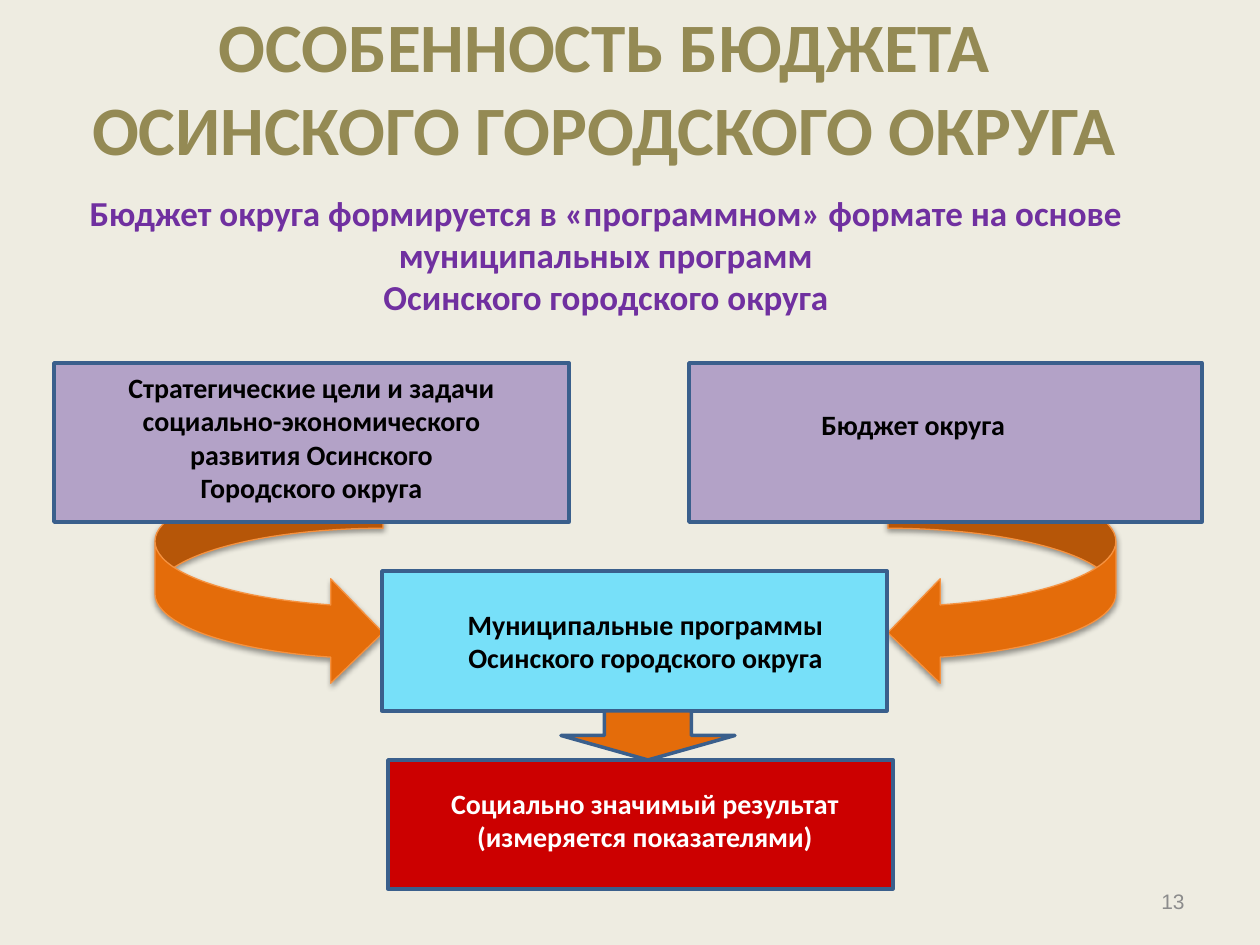
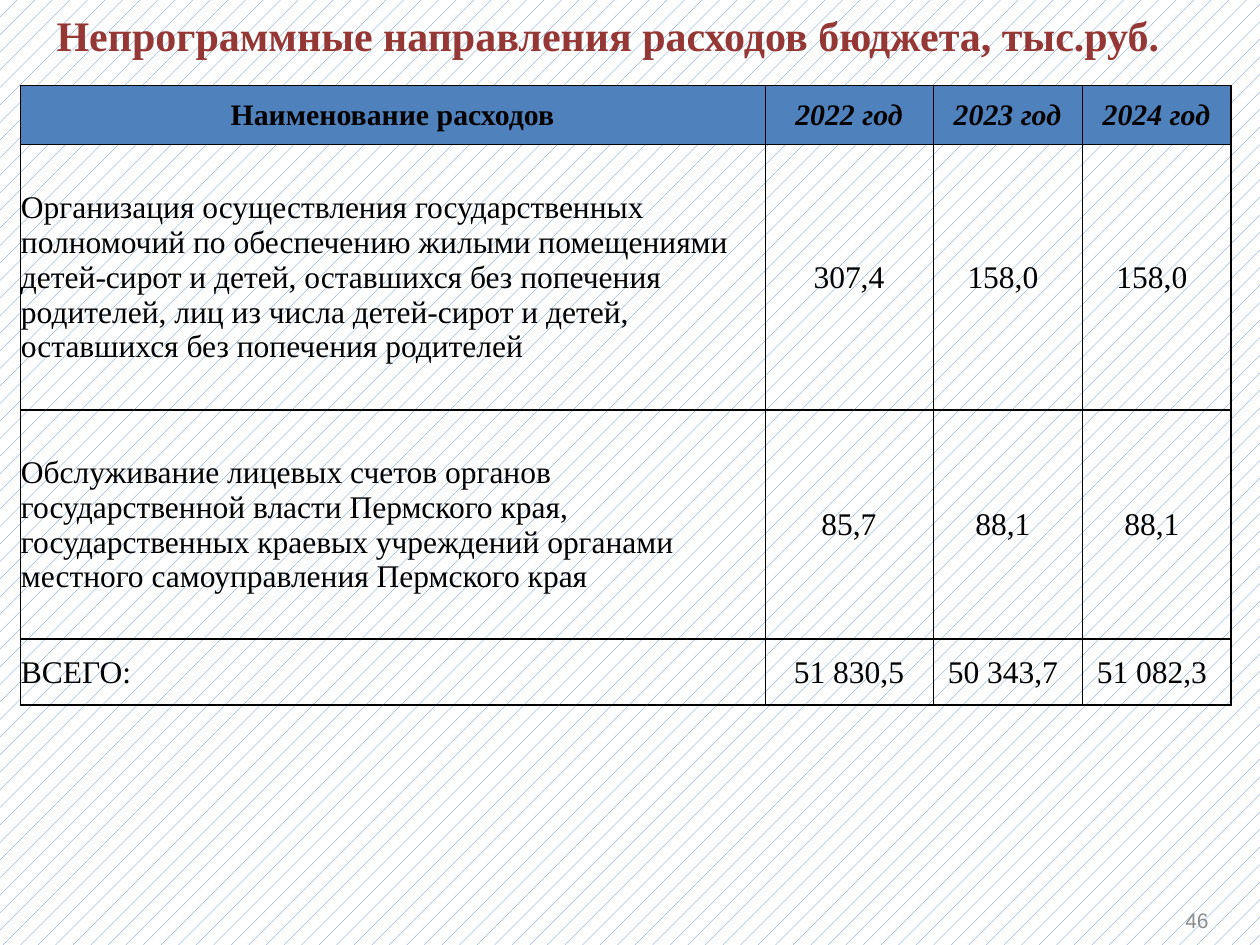
"""Build two budget slides: the programme scheme and the table of other spending."""
from dataclasses import dataclass

from lxml.etree import SubElement
from pptx import Presentation
from pptx.dml.color import RGBColor
from pptx.enum.dml import MSO_PATTERN
from pptx.enum.shapes import MSO_SHAPE
from pptx.enum.text import MSO_ANCHOR, MSO_AUTO_SIZE, PP_ALIGN
from pptx.oxml.ns import qn
from pptx.util import Emu, Pt

PIXELS_PER_INCH = 126
SLIDE_SIZE = (1260, 945)

BLACK = RGBColor(0x00, 0x00, 0x00)
WHITE = RGBColor(0xFF, 0xFF, 0xFF)
GRAY = RGBColor(0x8C, 0x8C, 0x8C)
CREAM = RGBColor(0xEE, 0xEC, 0xE1)
OLIVE = RGBColor(0x94, 0x8A, 0x54)
PURPLE = RGBColor(0x70, 0x30, 0xA0)
LILAC = RGBColor(0xB3, 0xA2, 0xC7)
CYAN = RGBColor(0x77, 0xE0, 0xF9)
RED = RGBColor(0xCC, 0x00, 0x00)
MAROON = RGBColor(0x95, 0x37, 0x35)
ORANGE = RGBColor(0xE4, 0x6C, 0x0A)
LIGHT_ORANGE = RGBColor(0xF6, 0x92, 0x40)
BLUE = RGBColor(0x4F, 0x81, 0xBD)
DARK_BLUE = RGBColor(0x3A, 0x5F, 0x8C)

SANS = "Calibri"
SERIF = "Times New Roman"
NUMBER_FONT = "Arial"


@dataclass(frozen=True)
class Area:
    """Place and size in px."""
    left: int
    top: int
    width: int
    height: int

    def emu(self) -> tuple:
        """Return the four lengths in EMU."""
        return tuple(map(px, (self.left, self.top, self.width, self.height)))


@dataclass(frozen=True)
class Style:
    """Look of a piece of text."""
    font: str
    size: float
    color: RGBColor
    bold: bool = False
    italic: bool = False
    align: PP_ALIGN = PP_ALIGN.CENTER


@dataclass(frozen=True)
class Figure:
    """Preset shape without text."""
    kind: MSO_SHAPE
    area: Area
    fill: RGBColor
    line: RGBColor = DARK_BLUE
    line_width: float = 2
    shadow: bool = False
    mirrored: bool = False


@dataclass(frozen=True)
class Label:
    """Text box with one paragraph a line."""
    area: Area
    lines: tuple
    style: Style
    wrap: bool = True
    anchor: MSO_ANCHOR = MSO_ANCHOR.TOP


BOX_TEXT = Style(SANS, 16, BLACK, bold=True)
HEADER_TEXT = Style(SERIF, 17, BLACK, bold=True)
YEAR_TEXT = Style(SERIF, 17, BLACK, bold=True, italic=True)
NAME_TEXT = Style(SERIF, 18, BLACK, align=PP_ALIGN.LEFT)
VALUE_TEXT = Style(SERIF, 18, BLACK)
NUMBER_TEXT = Style(NUMBER_FONT, 12, GRAY, align=PP_ALIGN.RIGHT)


def curved_arrow(left: int, mirrored: bool) -> Figure:
    """Describe a curved arrow that points to the programmes box."""
    return Figure(MSO_SHAPE.CURVED_RIGHT_ARROW, Area(left, 476, 228, 209), ORANGE,
                  LIGHT_ORANGE, 0.75, shadow=True, mirrored=mirrored)


FIGURES = (
    curved_arrow(888, mirrored=True),
    curved_arrow(155, mirrored=False),
    Figure(MSO_SHAPE.RECTANGLE, Area(388, 760, 505, 129), RED),
    Figure(MSO_SHAPE.RECTANGLE, Area(382, 571, 505, 140), CYAN),
    Figure(MSO_SHAPE.RECTANGLE, Area(689, 363, 513, 159), LILAC),
    Figure(MSO_SHAPE.RECTANGLE, Area(54, 363, 515, 159), LILAC),
    Figure(MSO_SHAPE.DOWN_ARROW, Area(561, 711, 174, 49), ORANGE),
)

LABELS = (
    Label(Area(26, 185, 1160, 140),
          ("Бюджет округа формируется в «программном» формате на основе муниципальных программ",
           "Осинского городского округа"),
          Style(SANS, 20, PURPLE, bold=True)),
    Label(Area(54, 364, 515, 149),
          ("Стратегические цели и задачи", "социально-экономического",
           "развития Осинского", "Городского округа"), BOX_TEXT),
    Label(Area(809, 401, 236, 47), ("Бюджет округа",),
          Style(SANS, 16, BLACK, bold=True, align=PP_ALIGN.LEFT), wrap=False),
    Label(Area(427, 601, 437, 81),
          ("Муниципальные программы", "Осинского городского округа"), BOX_TEXT, wrap=False),
    Label(Area(423, 780, 444, 81),
          ("Социально значимый результат", "(измеряется показателями)"),
          Style(SANS, 16, WHITE, bold=True), wrap=False),
)

SPENDING = (
    ("Наименование расходов", "2022 год", "2023 год", "2024 год"),
    ("Организация осуществления государственных полномочий по обеспечению жилыми "
     "помещениями детей-сирот и детей, оставшихся без попечения родителей, лиц из числа "
     "детей-сирот и детей, оставшихся без попечения родителей", "307,4", "158,0", "158,0"),
    ("Обслуживание лицевых счетов органов государственной власти Пермского края, "
     "государственных краевых учреждений органами местного самоуправления Пермского края",
     "85,7", "88,1", "88,1"),
    ("ВСЕГО:", "51 830,5", "50 343,7", "51 082,3"),
)
COLUMN_WIDTHS = (745, 168, 149, 149)
ROW_HEIGHTS = (59, 266, 229, 66)


def px(length: int) -> Emu:
    """Turn px into EMU."""
    return Emu(round(length * 914400 / PIXELS_PER_INCH))


def write(frame, lines: tuple, style: Style) -> None:
    """Write one paragraph a line in one style."""
    for index, line in enumerate(lines):
        para = frame.add_paragraph() if index else frame.paragraphs[0]
        para.alignment = style.align
        span = para.add_run()
        span.text = line
        font = span.font
        font.name, font.size = style.font, Pt(style.size)
        font.bold, font.italic = style.bold, style.italic
        font.color.rgb = style.color


def add_label(slide, label: Label) -> None:
    """Add a text box."""
    frame = slide.shapes.add_textbox(*label.area.emu()).text_frame
    frame.word_wrap = label.wrap
    frame.vertical_anchor = label.anchor
    write(frame, label.lines, label.style)


def set_title(slide, label: Label) -> None:
    """Move and fill the title placeholder."""
    title = slide.shapes.title
    title.left, title.top, title.width, title.height = label.area.emu()
    frame = title.text_frame
    frame.auto_size = MSO_AUTO_SIZE.NONE
    frame.vertical_anchor = label.anchor
    write(frame, label.lines, label.style)


def add_page_number(slide, number: str, area: Area) -> None:
    """Add the page number at the lower right."""
    add_label(slide, Label(area, (number,), NUMBER_TEXT, anchor=MSO_ANCHOR.MIDDLE))


def add_soft_shadow(shape) -> None:
    """Put a soft shadow under a shape."""
    effects = shape._element.spPr.find(qn("a:effectLst"))
    shadow = SubElement(effects, qn("a:outerShdw"), blurRad="40000", dist="20000",
                        dir="5400000", rotWithShape="0")
    color = SubElement(shadow, qn("a:srgbClr"), val=str(BLACK))
    SubElement(color, qn("a:alpha"), val="38000")


def add_figure(slide, figure: Figure) -> None:
    """Add a preset shape."""
    shape = slide.shapes.add_shape(figure.kind, *figure.area.emu())
    shape.shadow.inherit = False
    shape.fill.solid()
    shape.fill.fore_color.rgb = figure.fill
    shape.line.color.rgb = figure.line
    shape.line.width = Pt(figure.line_width)
    if figure.shadow:
        add_soft_shadow(shape)
    if figure.mirrored:
        shape._element.spPr.find(qn("a:xfrm")).set("flipH", "1")


def set_borders(cell, row: int, column: int) -> None:
    """Draw thin cell borders, thicker below the first data row and at the right edge."""
    last_column = column == len(COLUMN_WIDTHS) - 1
    widths = {"L": 0.5, "R": 1 if last_column else 0.5,
              "T": 1 if row > 1 else 0.5, "B": 1 if row > 0 else 0.5}
    properties = cell._tc.get_or_add_tcPr()
    for side, width in widths.items():
        border = SubElement(properties, qn(f"a:ln{side}"), w=str(Pt(width)))
        SubElement(SubElement(border, qn("a:solidFill")), qn("a:srgbClr"), val=str(BLACK))


def cell_style(row: int, column: int) -> Style:
    """Choose the text style of a cell."""
    if row == 0:
        return YEAR_TEXT if column else HEADER_TEXT
    return VALUE_TEXT if column else NAME_TEXT


def add_spending_table(slide) -> None:
    """Add the table of spending by year."""
    area = Area(20, 85, sum(COLUMN_WIDTHS), sum(ROW_HEIGHTS))
    table = slide.shapes.add_table(len(SPENDING), len(COLUMN_WIDTHS), *area.emu()).table
    table.first_row = table.horz_banding = False
    for column, width in zip(table.columns, COLUMN_WIDTHS):
        column.width = px(width)
    for row, height in zip(table.rows, ROW_HEIGHTS):
        row.height = px(height)
    for row, texts in enumerate(SPENDING):
        for column, text in enumerate(texts):
            cell = table.cell(row, column)
            cell.margin_left = cell.margin_top = px(1)
            cell.margin_right = px(10 if row and column > 1 else 1)
            cell.margin_bottom = 0
            cell.vertical_anchor = MSO_ANCHOR.MIDDLE
            set_borders(cell, row, column)
            if row:
                cell.fill.background()
            else:
                cell.fill.solid()
                cell.fill.fore_color.rgb = BLUE
            write(cell.text_frame, (text,), cell_style(row, column))


def build_scheme(slide) -> None:
    """Build the slide on the programme budget."""
    background = slide.background.fill
    background.solid()
    background.fore_color.rgb = CREAM
    set_title(slide, Label(Area(63, 38, 1082, 97),
                           ("ОСОБЕННОСТЬ БЮДЖЕТА ОСИНСКОГО ГОРОДСКОГО ОКРУГА",),
                           Style(SANS, 39.6, OLIVE, bold=True), anchor=MSO_ANCHOR.MIDDLE))
    for figure in FIGURES:
        add_figure(slide, figure)
    for label in LABELS:
        add_label(slide, label)
    add_page_number(slide, "13", Area(903, 876, 294, 50))


def build_spending(slide) -> None:
    """Build the slide on spending outside the programmes."""
    background = slide.background.fill
    background.patterned()
    background.pattern = MSO_PATTERN.PERCENT_5
    background.fore_color.rgb = BLUE
    background.back_color.rgb = WHITE
    set_title(slide, Label(Area(44, 3, 1160, 64),
                           ("Непрограммные направления расходов бюджета, тыс.руб.",),
                           Style(SERIF, 24, MAROON, bold=True, align=PP_ALIGN.LEFT)))
    add_spending_table(slide)
    add_page_number(slide, "46", Area(1116, 895, 105, 50))


def main() -> None:
    """Build and save the deck."""
    deck = Presentation()
    deck.slide_width, deck.slide_height = map(px, SLIDE_SIZE)
    title_only = deck.slide_layouts.get_by_name("Title Only")
    for build in (build_scheme, build_spending):
        build(deck.slides.add_slide(title_only))
    deck.save("out.pptx")


if __name__ == "__main__":
    main()
